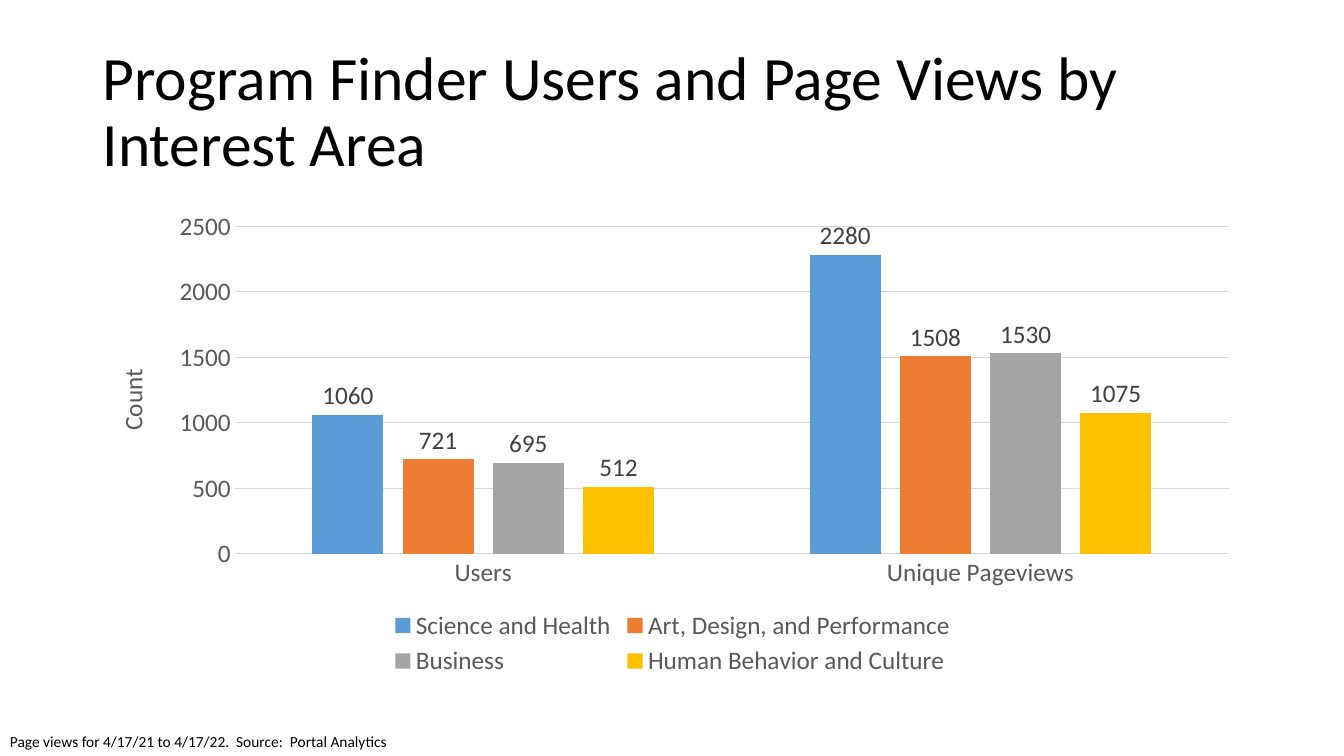
"""Build a slide with a clustered column chart of users and page views by interest area."""
from pptx import Presentation
from pptx import util as u
from pptx.chart.data import CategoryChartData
from pptx.dml.color import RGBColor
from pptx.enum import chart as charts, text

COLORS = {
    "black": "000000",
    "axis_text": "595959",
    "label_text": "404040",
    "grid": "D9D9D9",
}
INTEREST_AREAS = [
    ("Science and Health", (1060, 2280), "5B9BD5"),
    ("Art, Design, and Performance", (721, 1508), "ED7D31"),
    ("Business", (695, 1530), "A5A5A5"),
    ("Human Behavior and Culture", (512, 1075), "FFC000"),
]


def set_font(font, size, color):
    font.name = "Calibri"
    font.size = u.Pt(size)
    font.bold = False
    font.color.rgb = RGBColor.from_string(COLORS[color])


def add_text(slide, box, content, size, anchor, wrap, fit, line_spacing):
    shape = slide.shapes.add_textbox(*[u.Inches(length) for length in box])
    frame = shape.text_frame
    frame.word_wrap = wrap
    frame.auto_size = fit
    frame.vertical_anchor = anchor
    paragraph = frame.paragraphs[0]
    paragraph.line_spacing = line_spacing
    run = paragraph.add_run()
    run.text = content
    set_font(run.font, size, "black")


presentation = Presentation()
presentation.slide_width = u.Inches(13.33)
presentation.slide_height = u.Inches(7.5)
slide = presentation.slides.add_slide(presentation.slide_layouts[6])

add_text(slide, (0.92, 0.4, 11.5, 1.45),
         "Program Finder Users and Page Views by Interest Area",
         44, text.MSO_ANCHOR.MIDDLE, True, text.MSO_AUTO_SIZE.NONE, 0.9)
add_text(slide, (0, 7.21, 4.06, 0.29),
         "Page views for 4/17/21 to 4/17/22.  Source:  Portal Analytics",
         11, text.MSO_ANCHOR.TOP, False, text.MSO_AUTO_SIZE.SHAPE_TO_FIT_TEXT, 1.0)

chart_data = CategoryChartData()
chart_data.categories = ["Users", "Unique Pageviews"]
for name, values, color in INTEREST_AREAS:
    chart_data.add_series(name, values)
chart = slide.shapes.add_chart(
    charts.XL_CHART_TYPE.COLUMN_CLUSTERED,
    u.Inches(0.92), u.Inches(2), u.Inches(11.5), u.Inches(4.76),
    chart_data).chart
set_font(chart.font, 18, "black")
chart.has_title = False

chart.has_legend = True
chart.legend.position = charts.XL_LEGEND_POSITION.BOTTOM
chart.legend.include_in_layout = False
set_font(chart.legend.font, 18, "axis_text")

for axis in (chart.category_axis, chart.value_axis):
    axis.major_tick_mark = charts.XL_TICK_MARK.NONE
    axis.minor_tick_mark = charts.XL_TICK_MARK.NONE
    set_font(axis.tick_labels.font, 18, "axis_text")

value_axis = chart.value_axis
value_axis.minimum_scale = 0
value_axis.maximum_scale = 2500
value_axis.major_unit = 500
value_axis.has_major_gridlines = True
value_axis.format.line.fill.background()
for line in (chart.category_axis.format.line, value_axis.major_gridlines.format.line):
    line.width = u.Pt(0.75)
    line.color.rgb = RGBColor.from_string(COLORS["grid"])

title_run = value_axis.axis_title.text_frame.paragraphs[0].add_run()
title_run.text = "Count"
set_font(title_run.font, 18, "axis_text")

plot = chart.plots[0]
plot.gap_width = 219
plot.overlap = -27
plot.vary_by_categories = False
for series, (name, values, color) in zip(plot.series, INTEREST_AREAS):
    series.format.fill.solid()
    series.format.fill.fore_color.rgb = RGBColor.from_string(color)
    labels = series.data_labels
    labels.show_value = True
    labels.position = charts.XL_LABEL_POSITION.OUTSIDE_END
    set_font(labels.font, 18, "label_text")

presentation.save("out.pptx")
